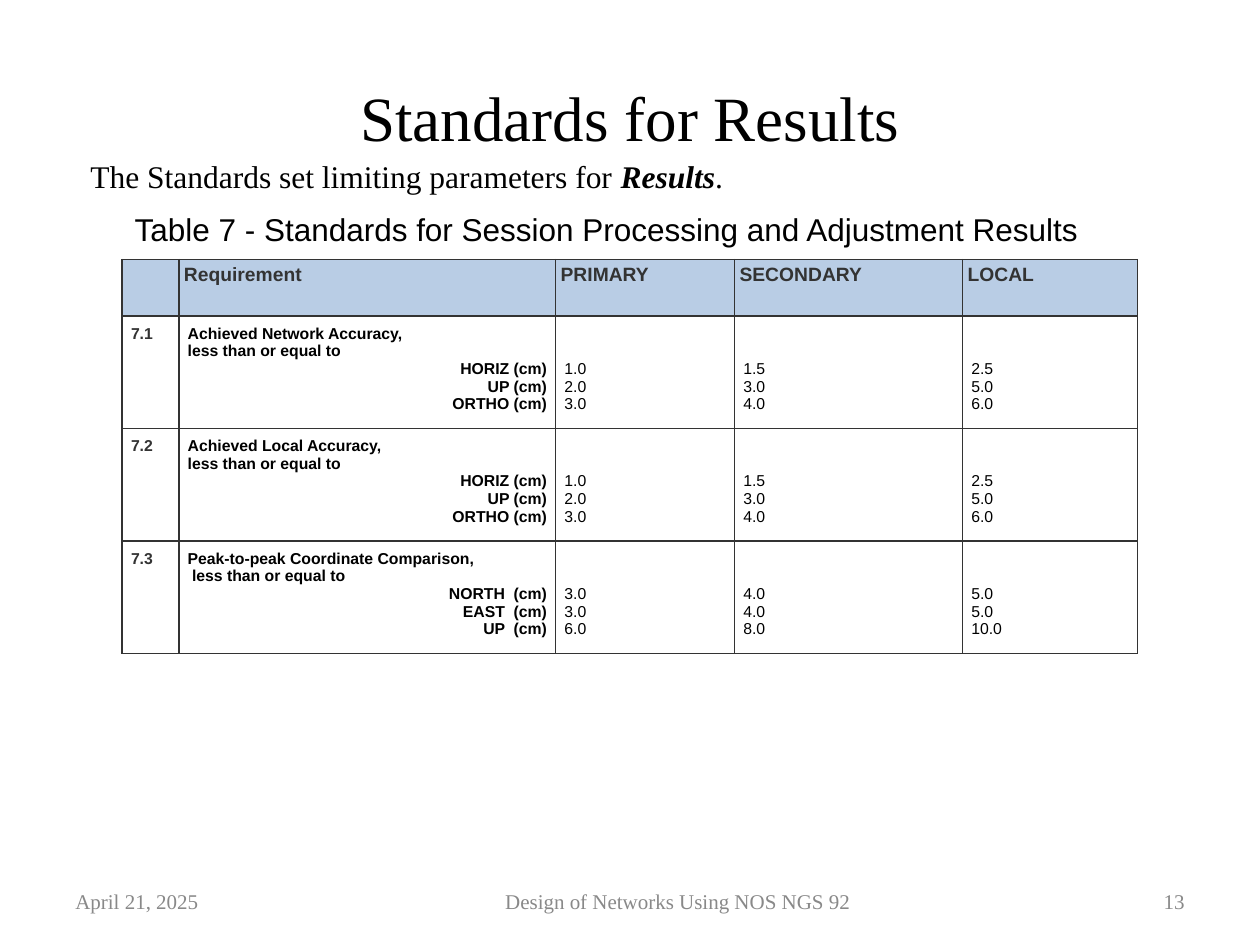
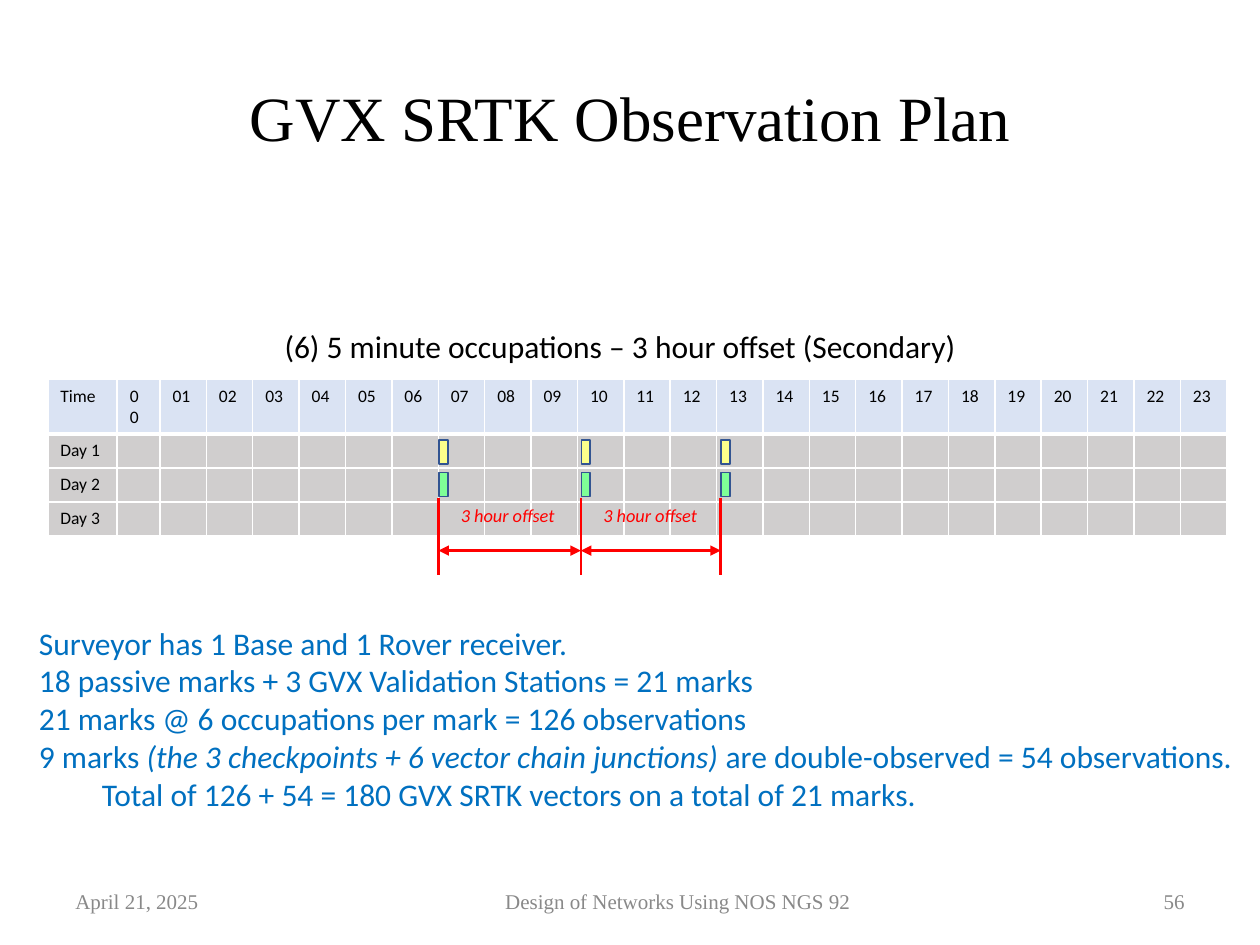
"""Builds two slides on survey standards and an observation plan."""
from dataclasses import dataclass

from lxml.etree import SubElement
from pptx import Presentation
from pptx.dml.color import RGBColor
from pptx.enum.shapes import MSO_CONNECTOR as Connector, MSO_SHAPE as Shape
from pptx.enum.text import MSO_ANCHOR as Anchor, PP_ALIGN as Align
from pptx.oxml.ns import qn
from pptx.util import Inches, Pt


@dataclass(frozen=True)
class Theme:
    """Colours, fonts and type sizes; the grid cell is a tenth of an inch."""
    cell: float = 0.1
    serif: str = "Times New Roman"
    sans: str = "Arial"
    plain: str = "Calibri"
    title: float = 36
    body: float = 18
    footer: float = 12
    header: float = 11
    offset: float = 10.5
    hours: float = 10
    requirement: float = 9
    black: str = "000000"
    white: str = "FFFFFF"
    charcoal: str = "333333"
    footer_grey: str = "898989"
    header_blue: str = "B9CDE5"
    hour_blue: str = "DAE3F3"
    day_grey: str = "D0CECE"
    note_blue: str = "0070C0"
    red: str = "FF0000"
    yellow: str = "FCFF8B"
    green: str = "7FFF97"
    outline: str = "325491"


class Deck:
    """Holds the theme and the current slide and draws each kind of element."""

    def __init__(self, theme):
        self.theme = theme
        self.presentation = Presentation()
        self.presentation.slide_width = self.grid(100)
        self.presentation.slide_height = self.grid(75)
        self.slide = None

    def grid(self, count):
        """Turns a number of columns or rows into a length."""
        return Inches(round(count * self.theme.cell, 4))

    def box(self, *lengths):
        """Turns several grid lengths into slide lengths."""
        return [self.grid(length) for length in lengths]

    def add_slide(self, title, number):
        """Starts a slide with its title and footers."""
        theme = self.theme
        self.slide = self.presentation.slides.add_slide(self.presentation.slide_layouts[6])
        self.text((5, 3, 90, 12.5), [title], theme.title, theme.serif,
                  align=Align.CENTER, anchor=Anchor.MIDDLE)
        footers = (
            (5, 14, "April 21, 2025", Align.LEFT),
            (23.1, 61.4, "Design of Networks Using NOS NGS 92", Align.CENTER),
            (87.1, 7.9, str(number), Align.RIGHT),
        )
        for left, width, words, align in footers:
            self.text((left, 69.5, width, 4), [words], theme.footer, theme.serif,
                      theme.footer_grey, align=align, anchor=Anchor.MIDDLE)

    def text(self, place, lines, size, font, colour=None, align=Align.LEFT,
             anchor=Anchor.TOP, italic=False):
        """Adds a text box and returns its paragraphs."""
        frame = self.slide.shapes.add_textbox(*self.box(*place)).text_frame
        frame.word_wrap = True
        frame.vertical_anchor = anchor
        self.fill_frame(frame, lines, size, font, colour or self.theme.black,
                        [align] * len(lines), italic=italic)
        return frame.paragraphs

    def fill_frame(self, frame, lines, size, font, colour, aligns, bold=False, italic=False):
        """Writes lines, each a string or a list of (text, bold, italic) runs."""
        for index, (line, align) in enumerate(zip(lines, aligns)):
            paragraph = frame.add_paragraph() if index else frame.paragraphs[0]
            paragraph.alignment = align
            paragraph.font.size = Pt(size)
            paragraph.font.name = font
            paragraph.font.color.rgb = RGBColor.from_string(colour)
            if isinstance(line, str):
                paragraph.font.bold, paragraph.font.italic = bold, italic
                if line:
                    paragraph.add_run().text = line
                else:
                    paragraph._p.get_or_add_endParaRPr().set("sz", str(size * 100))
                continue
            for words, run_bold, run_italic in line:
                run = paragraph.add_run()
                run.text = words
                run.font.bold, run.font.italic = run_bold, run_italic

    def table(self, left, top, widths, heights):
        """Adds a plain table with the given columns and rows."""
        frame = self.slide.shapes.add_table(
            len(heights), len(widths), *self.box(left, top, sum(widths), sum(heights)))
        table = frame.table
        table.first_row = table.horz_banding = False
        for column, width in zip(table.columns, widths):
            column.width = self.grid(width)
        for row, height in zip(table.rows, heights):
            row.height = self.grid(height)
        return table

    def cell(self, cell, lines, size, font, colour, fill, border, margins=(1, 0.5, 1, 0.5),
             aligns=None, bold=False, thick=None):
        """Writes and paints one cell; thick names the side with a heavy border."""
        (cell.margin_left, cell.margin_top,
         cell.margin_right, cell.margin_bottom) = self.box(*margins)
        properties = cell._tc.get_or_add_tcPr()
        for side in "LRTB":
            width = Pt(3 if side == thick else 1)
            line = SubElement(properties, qn(f"a:ln{side}"), w=str(width))
            SubElement(SubElement(line, qn("a:solidFill")), qn("a:srgbClr"), val=border)
        cell.fill.solid()
        cell.fill.fore_color.rgb = RGBColor.from_string(fill)
        self.fill_frame(cell.text_frame, lines, size, font, colour,
                        aligns or [Align.LEFT] * len(lines), bold)

    def rectangle(self, place, fill):
        """Adds an outlined rectangle."""
        shape = self.slide.shapes.add_shape(Shape.RECTANGLE, *self.box(*place))
        shape.shadow.inherit = False
        shape.fill.solid()
        shape.fill.fore_color.rgb = RGBColor.from_string(fill)
        shape.line.color.rgb = RGBColor.from_string(self.theme.outline)
        shape.line.width = Pt(1)

    def line(self, start, end, arrows=False):
        """Adds a red line, with an arrowhead at both ends if asked."""
        connector = self.slide.shapes.add_connector(
            Connector.STRAIGHT, *self.box(*start, *end))
        connector.line.color.rgb = RGBColor.from_string(self.theme.red)
        connector.line.width = Pt(1.5)
        if arrows:
            outline = connector.line._get_or_add_ln()
            for tip in ("headEnd", "tailEnd"):
                SubElement(outline, qn(f"a:{tip}"), type="triangle")
        SubElement(connector._element.spPr, qn("a:effectLst"))


def add_standards_slide(deck):
    """Adds the slide with the table of limits for results."""
    theme = deck.theme
    deck.add_slide("Standards for Results", 13)
    deck.text((9.7, 16.2, 79.7, 4),
              ["Table 7 - Standards for Session Processing and Adjustment Results"],
              theme.body, theme.sans, anchor=Anchor.MIDDLE)
    deck.text((6.2, 12, 75.7, 4),
              [[("The Standards set limiting parameters for ", False, False),
                ("Results", True, True), (".", False, False)]],
              theme.body, theme.serif)

    table = deck.table(9.7, 20.6, (4.5, 29.9, 14.2, 18.1, 13.9), (4.5, 8.9, 8.9, 8.9))
    headings = ("", "Requirement", "PRIMARY", "SECONDARY", "LOCAL")
    for column, heading in enumerate(headings):
        deck.cell(table.cell(0, column), [heading], theme.header, theme.sans, theme.charcoal,
                  theme.header_blue, theme.charcoal, (0.4,) * 4, bold=True)

    axes = ["HORIZ (cm)", "UP (cm)", "ORTHO (cm)"]
    accuracy = (["1.0", "2.0", "3.0"], ["1.5", "3.0", "4.0"], ["2.5", "5.0", "6.0"])
    comparison = (["3.0", "3.0", "6.0"], ["4.0", "4.0", "8.0"], ["5.0", "5.0", "10.0"])
    requirements = (
        ("7.1", ["Achieved Network Accuracy,", "less than or equal to"], axes, accuracy),
        ("7.2", ["Achieved Local Accuracy,", "less than or equal to"], axes, accuracy),
        ("7.3", ["Peak-to-peak Coordinate Comparison,", " less than or equal to"],
         ["NORTH  (cm)", "EAST  (cm)", "UP  (cm)"], comparison),
    )
    margins, value_margins = (0.7,) * 4, (0.7, 3.5, 0.7, 0.7)
    aligns = [Align.LEFT] * 2 + [Align.RIGHT] * 3
    for row, (number, requirement, names, limits) in enumerate(requirements, 1):
        cells = [([number], theme.charcoal, margins, None, True),
                 (requirement + names, theme.black, margins, aligns, True)]
        cells += [(values, theme.black, value_margins, None, False) for values in limits]
        for column, (lines, colour, inset, sides, bold) in enumerate(cells):
            deck.cell(table.cell(row, column), lines, theme.requirement, theme.sans, colour,
                      theme.white, theme.charcoal, inset, sides, bold)


def add_plan_slide(deck):
    """Adds the slide with the hourly observation plan."""
    theme = deck.theme
    deck.add_slide("GVX SRTK Observation Plan", 56)
    label_width, first_width, table_width = 5.5, 3.4, 93.6
    hour_width = (table_width - label_width - first_width) / 23
    table = deck.table(3.8, 30.1, [label_width, first_width] + [hour_width] * 23,
                       (4.2, 2.7, 2.7, 2.7))
    rows = [["Time"] + [f"{hour:02}" for hour in range(24)]]
    rows += [[f"Day {day}"] + [""] * 24 for day in (1, 2, 3)]
    for row, labels in enumerate(rows):
        for column, label in enumerate(labels):
            deck.cell(table.cell(row, column), [label], theme.hours, theme.plain, theme.black,
                      theme.day_grey if row else theme.hour_blue, theme.white,
                      thick={0: "B", 1: "T"}.get(row))

    deck.text((21.6, 25.5, 56.9, 4), ["(6) 5 minute occupations – 3 hour offset (Secondary)"],
              theme.body, theme.plain)

    sessions = (34.8, 46.1, 57.2)
    for left in sessions:
        deck.rectangle((left + 0.05, 34.95, 0.7, 1.9), theme.yellow)
        deck.rectangle((left + 0.05, 37.5, 0.7, 1.9), theme.green)
        deck.line((left, 39.5), (left, 45.6))
    for start, end in zip(sessions, sessions[1:]):
        deck.text((start + 0.8, 39.5, 9.7, 2.8), ["3 hour offset"], theme.offset, theme.plain,
                  theme.red, italic=True)
        deck.line((start, 43.7), (end, 43.7), arrows=True)

    notes = deck.text((2.1, 49, 97.2, 16.2), [
        "Surveyor has 1 Base and 1 Rover receiver.",
        "18 passive marks + 3 GVX Validation Stations = 21 marks",
        "21 marks @ 6 occupations per mark = 126 observations",
        [("9 marks ", False, False),
         ("(the 3 checkpoints + 6 vector chain junctions) ", False, True),
         ("are double-observed = 54 observations.", False, False)],
        "Total of 126 + 54 = 180 GVX SRTK vectors on a total of 21 marks.",
    ], theme.body, theme.plain, theme.note_blue)
    notes[-1]._p.get_or_add_pPr().set("marL", str(deck.grid(5)))


def main():
    """Builds and saves the presentation."""
    deck = Deck(Theme())
    add_standards_slide(deck)
    add_plan_slide(deck)
    deck.presentation.save("out.pptx")


if __name__ == "__main__":
    main()
